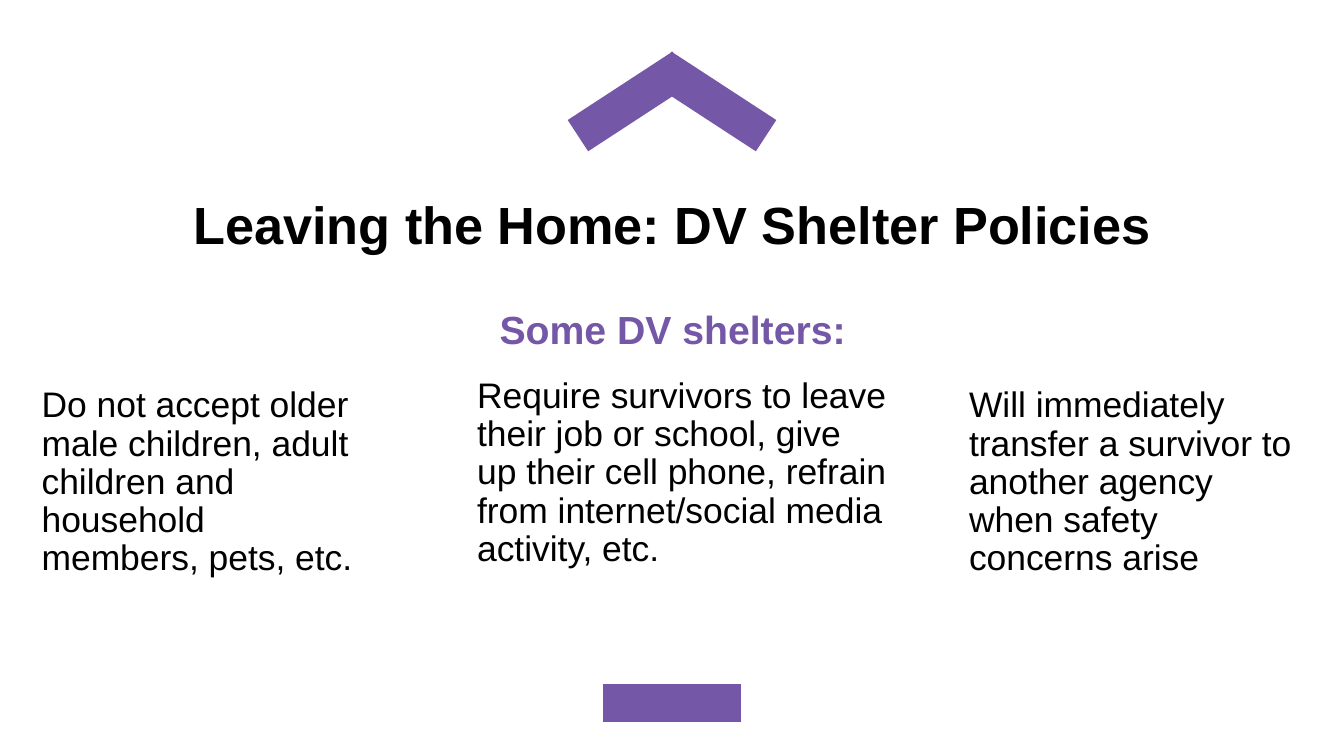
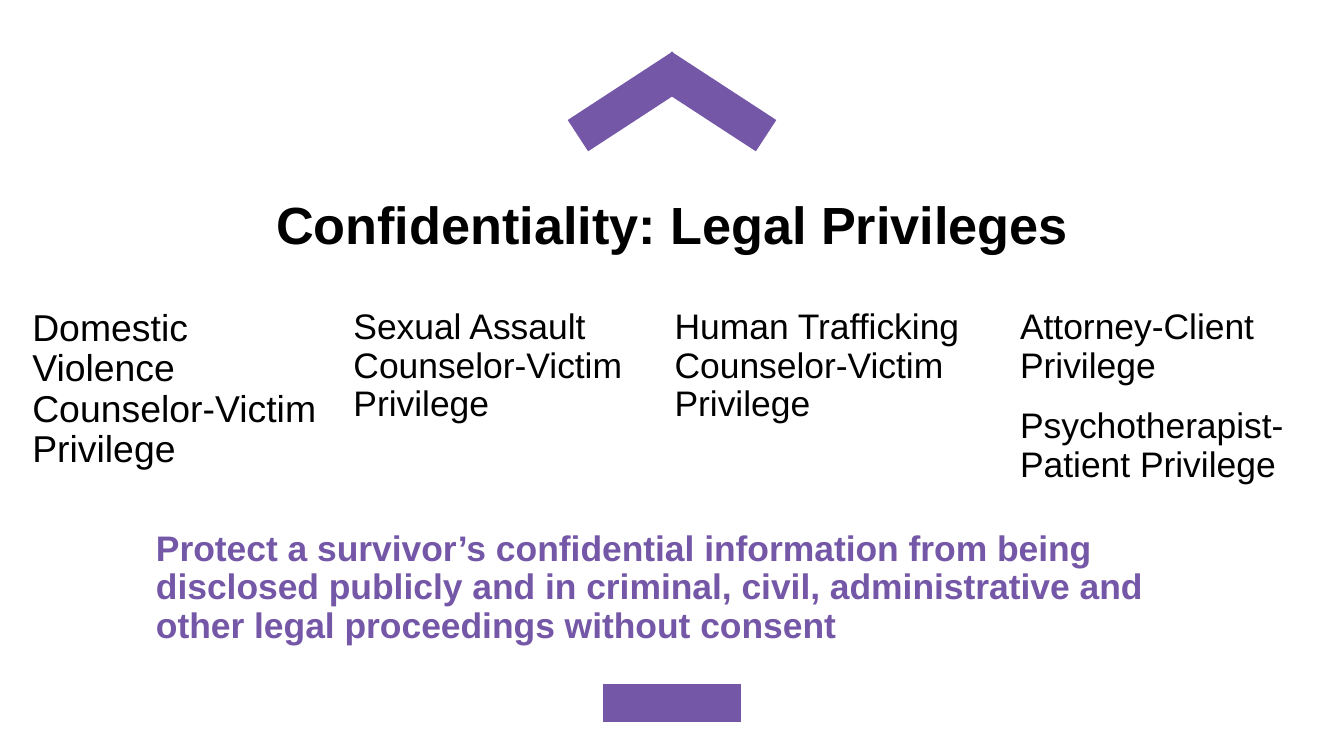
from lxml import etree
from pptx import Presentation
from pptx.dml.color import RGBColor
from pptx.enum.shapes import MSO_CONNECTOR
from pptx.enum.text import MSO_ANCHOR, MSO_AUTO_SIZE, PP_ALIGN
from pptx.oxml.ns import qn
from pptx.util import Inches, Pt

STRAIGHT = MSO_CONNECTOR.STRAIGHT
TOP, MIDDLE = MSO_ANCHOR.TOP, MSO_ANCHOR.MIDDLE
LEFT, CENTER = PP_ALIGN.LEFT, PP_ALIGN.CENTER
NO_AUTOFIT = MSO_AUTO_SIZE.NONE

FONT = "Arial"
BLACK, PURPLE = "000000", "7557A7"
TITLE_ONLY = 5
WIDTH, HEIGHT = Inches(10), Inches(5.625)

# Boxes are left, top, width, height in percent of the slide
TITLE_BOX = (6.9, 22, 86.2, 16.2)


def color(value):
    return RGBColor.from_string(value)


def across(percent):
    return round(WIDTH * percent / 100)


def down(percent):
    return round(HEIGHT * percent / 100)


def write(shape, box, paragraphs, size, hue=BLACK, bold=False, align=LEFT,
          anchor=TOP, before=7.5):
    """Place a text shape in its box and fill it with styled paragraphs."""
    x, y, w, h = box
    shape.left, shape.top = across(x), down(y)
    shape.width, shape.height = across(w), down(h)
    tf = shape.text_frame
    tf.word_wrap = True
    tf.auto_size = NO_AUTOFIT
    tf.vertical_anchor = anchor
    tf.margin_left = tf.margin_right = Inches(0.07)
    tf.margin_top = tf.margin_bottom = Inches(0.04)
    tf.text = "\n".join(paragraphs)
    for p in tf.paragraphs:
        p.alignment = align
        p.line_spacing = 0.9
        p.space_before = Pt(before)
        p.font.name = FONT
        p.font.size = Pt(size)
        p.font.bold = bold
        p.font.color.rgb = color(hue)


def add_text(s, box, paragraphs, size=19, **style):
    write(s.shapes.add_textbox(0, 0, 0, 0), box, paragraphs, size, **style)


def add_bar(shapes, x1, y1, x2, y2):
    """Draw a thick purple line between two points."""
    bar = shapes.add_connector(STRAIGHT, across(x1), down(y1),
                               across(x2), down(y2))
    bar.line.color.rgb = color(PURPLE)
    bar.line.width = Pt(20)
    etree.SubElement(bar._element.spPr, qn("a:effectLst"))


def add_framed_slide(prs, title):
    """Add a slide with the title, the roof above and the bar below."""
    s = prs.slides.add_slide(prs.slide_layouts[TITLE_ONLY])
    write(s.shapes.title, TITLE_BOX, [title], 28, bold=True, align=CENTER,
          anchor=MIDDLE, before=0)
    # Roof: two mirrored lines that overlap at the peak
    roof = s.shapes.add_group_shape()
    for side in (1, -1):
        add_bar(roof.shapes, 50 - 0.8 * side, 8.9, 50 + 7 * side, 17.95)
    # Bottom bar
    add_bar(s.shapes, 44.9, 93, 55.1, 93)
    return s


def shelter_policies(prs):
    s = add_framed_slide(prs, "Leaving the Home: DV Shelter Policies")
    add_text(s, (10.1, 40.35, 79.9, 8.2), ["Some DV shelters:"], 21,
             hue=PURPLE, bold=True, align=CENTER)
    # Three policies
    policies = [
        ((2.4, 50.5, 25.4, 36.8), "Do not accept older male children, adult "
         "children and household members, pets, etc."),
        ((34.8, 49.25, 31.9, 38.4), "Require survivors to leave their job or "
         "school, give up their cell phone, refrain from internet/social "
         "media activity, etc."),
        ((71.4, 50.5, 26.1, 36.8), "Will immediately transfer a survivor to "
         "another agency when safety concerns arise"),
    ]
    for box, text in policies:
        add_text(s, box, [text])


def legal_privileges(prs):
    s = add_framed_slide(prs, "Confidentiality: Legal Privileges")
    # Four columns: left, width, size, space before, paragraphs
    columns = [
        (1.7, 23.2, 20, 7.5,
         ["Domestic Violence Counselor-Victim Privilege"]),
        (25.6, 23.2, 19, 7.5, ["Sexual Assault Counselor-Victim Privilege"]),
        (49.5, 25.3, 19, 7.5,
         ["Human Trafficking Counselor-Victim Privilege"]),
        (75.2, 23.2, 19, 12, ["Attorney-Client Privilege",
                              "Psychotherapist-Patient Privilege"]),
    ]
    for left, width, size, before, paragraphs in columns:
        add_text(s, (left, 40.2, width, 47.1), paragraphs, size,
                 before=before)
    # Purpose of the privileges
    add_text(s, (10.9, 69.5, 79.9, 17.6),
             ["Protect a survivor’s confidential information from being "
              "disclosed publicly and in criminal, civil, administrative and "
              "other legal proceedings without consent"],
             hue=PURPLE, bold=True)


def main():
    prs = Presentation()
    prs.slide_width, prs.slide_height = WIDTH, HEIGHT
    shelter_policies(prs)
    legal_privileges(prs)
    prs.save("out.pptx")


if __name__ == "__main__":
    main()
